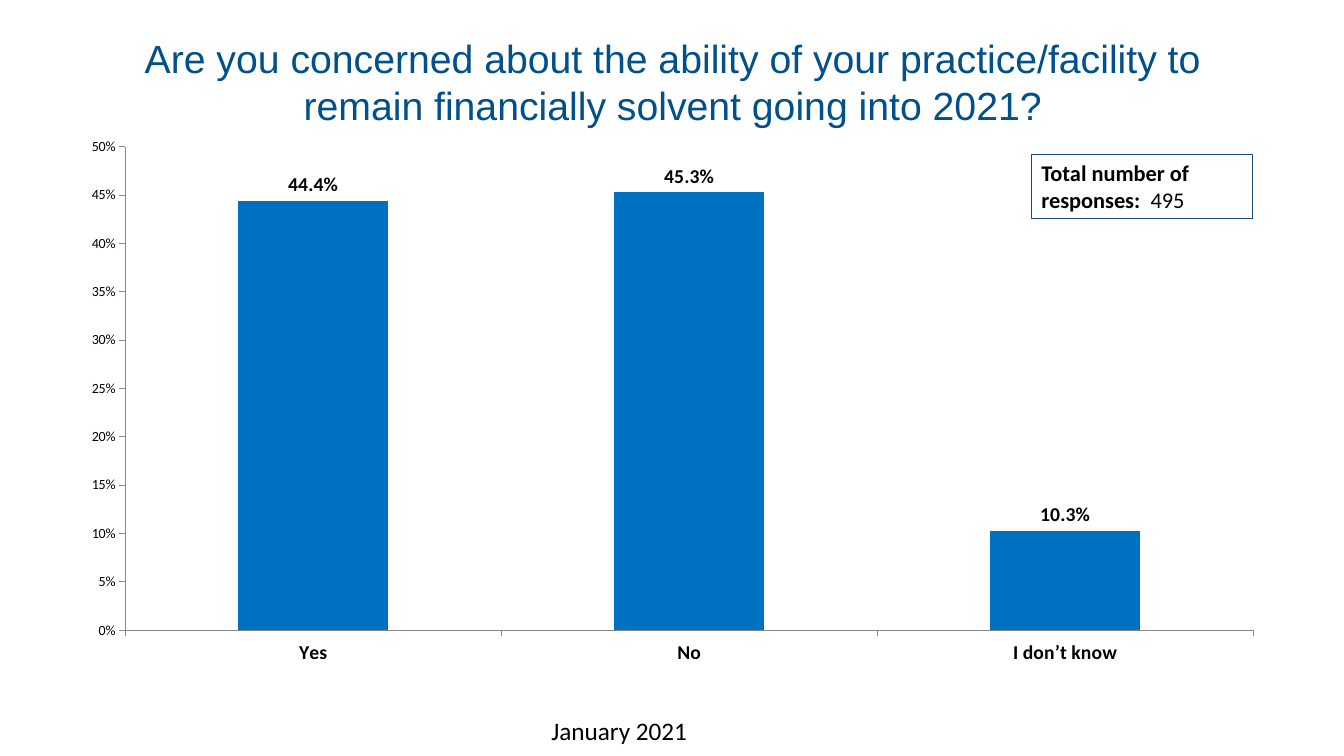
from pptx import Presentation
from pptx.chart.data import CategoryChartData
from pptx.dml.color import RGBColor
from pptx.enum.chart import XL_CHART_TYPE, XL_LABEL_POSITION, XL_TICK_MARK
from pptx.enum.text import MSO_ANCHOR, PP_ALIGN
from pptx.util import Inches, Pt

QUESTION = ("Are you concerned about the ability of your practice/facility to "
            "remain financially solvent going into 2021?")
ANSWERS = {"Yes": 0.444, "No": 0.453, "I don’t know": 0.103}
RESPONSES = [("Total number of responses:  ", True), ("495", False)]
SURVEY_DATE = "January 2021"

WIDTH, HEIGHT = 13.33, 7.5
AREAS = {  # left, top, width, height in inches
    "question": (0.92, 0.08, 11.5, 1.45),
    "responses": (10.23, 1.53, 2.19, 0.64),
    "answers": (0.67, 1.27, 12, 5.43),
    "date": (5.37, 7.05, 4.22, 0.4),
}
AXIS_TEXT = {"name": "Calibri", "size": Pt(10), "bold": False}
LABEL_TEXT = {"name": "Calibri", "size": Pt(14), "bold": True}


def area(part):
    return [Inches(length) for length in AREAS[part]]


def color(hex_code):
    return RGBColor.from_string(hex_code)


def style(font, formats, hex_code="000000"):
    for attribute, value in formats.items():
        setattr(font, attribute, value)
    font.color.rgb = color(hex_code)


def outline(line, hex_code):
    line.color.rgb = color(hex_code)
    line.width = Pt(0.75)


def add_question(slide):
    title = slide.shapes.title
    title.left, title.top, title.width, title.height = area("question")
    frame = title.text_frame
    frame.word_wrap = True
    frame.vertical_anchor = MSO_ANCHOR.MIDDLE
    frame.text = QUESTION
    paragraph = frame.paragraphs[0]
    paragraph.alignment = PP_ALIGN.CENTER
    style(paragraph.runs[0].font, {"name": "Arial", "size": Pt(28)}, "005089")


def add_answers(slide):
    answers = CategoryChartData(number_format="0.0%")
    answers.categories = list(ANSWERS)
    answers.add_series("Series 1", list(ANSWERS.values()))
    chart = slide.shapes.add_chart(
        XL_CHART_TYPE.COLUMN_CLUSTERED, *area("answers"), answers).chart
    chart.has_legend = chart.has_title = False
    style(chart.font, AXIS_TEXT)

    for axis, text in ((chart.category_axis, LABEL_TEXT),
                       (chart.value_axis, AXIS_TEXT)):
        axis.has_major_gridlines = False
        axis.major_tick_mark = XL_TICK_MARK.OUTSIDE
        axis.minor_tick_mark = XL_TICK_MARK.NONE
        style(axis.tick_labels.font, text)
        outline(axis.format.line, "888888")
    shares = chart.value_axis
    shares.minimum_scale, shares.maximum_scale, shares.major_unit = 0, 0.5, 0.05
    shares.tick_labels.number_format = "0%"
    shares.tick_labels.number_format_is_linked = False

    plot = chart.plots[0]
    plot.gap_width = 150
    plot.vary_by_categories = False
    bars = plot.series[0]
    bars.format.fill.solid()
    bars.format.fill.fore_color.rgb = color("0070C0")
    labels = bars.data_labels
    labels.show_value = True
    labels.position = XL_LABEL_POSITION.OUTSIDE_END
    labels.number_format = "0.0%"
    labels.number_format_is_linked = False
    style(labels.font, LABEL_TEXT)


def add_note(slide, part, pieces, size):
    """Add a text box made of (text, bold) pieces."""
    note = slide.shapes.add_textbox(*area(part))
    note.text_frame.word_wrap = True
    paragraph = note.text_frame.paragraphs[0]
    for text, bold in pieces:
        run = paragraph.add_run()
        run.text = text
        style(run.font, {"name": "Calibri", "size": Pt(size), "bold": bold})
    return note


def main():
    deck = Presentation()
    deck.slide_width, deck.slide_height = Inches(WIDTH), Inches(HEIGHT)
    slide = deck.slides.add_slide(deck.slide_layouts.get_by_name("Title Only"))
    add_question(slide)
    add_answers(slide)
    responses = add_note(slide, "responses", RESPONSES, 16)
    outline(responses.line, "1F497D")
    add_note(slide, "date", [(SURVEY_DATE, False)], 18)
    deck.save("out.pptx")


if __name__ == "__main__":
    main()
